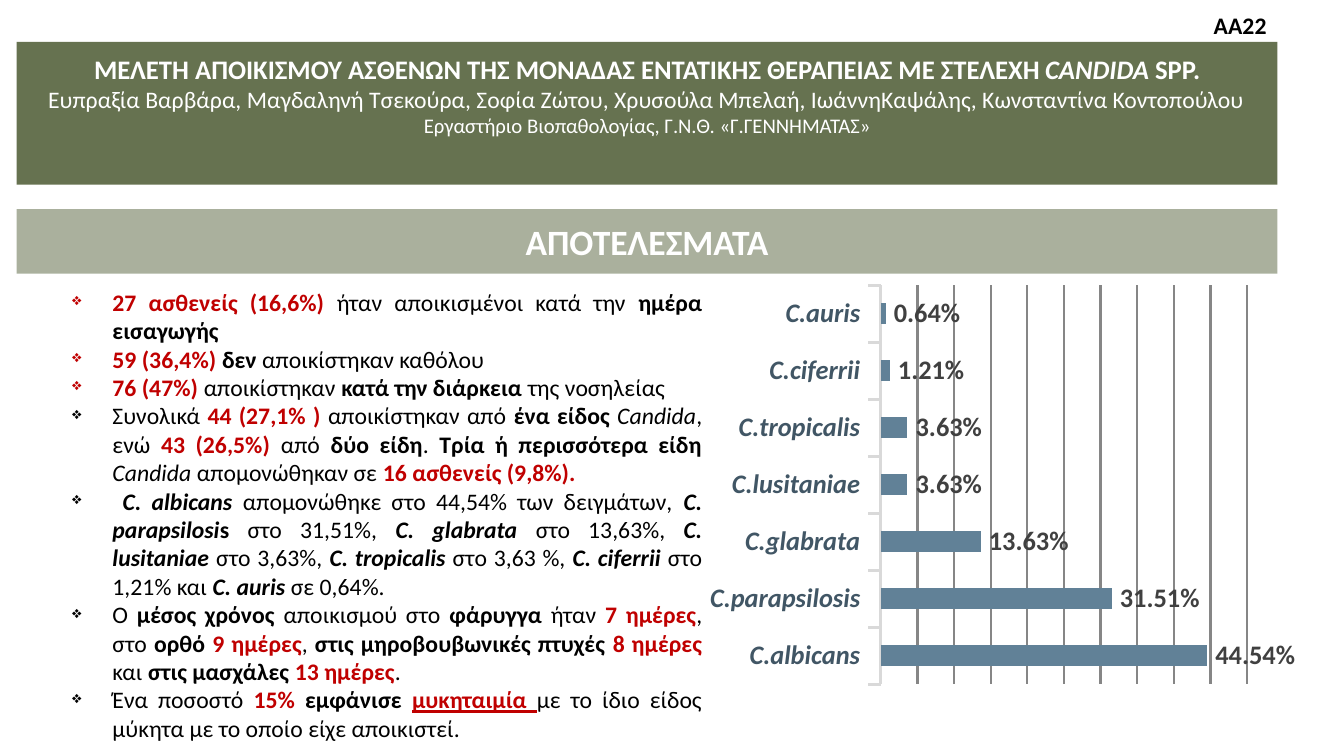
from dataclasses import dataclass

from lxml import etree
from pptx import Presentation
from pptx import util as u
from pptx.chart import data as chart_data
from pptx.dml.color import RGBColor
from pptx.enum import chart as ch, shapes, text
from pptx.oxml import parse_xml
from pptx.oxml.ns import nsdecls, qn

OLIVE = RGBColor(0x56, 0x63, 0x3D)
WHITE = RGBColor(0xFF, 0xFF, 0xFF)
BLACK = RGBColor(0, 0, 0)
RED = RGBColor(0xC0, 0, 0)
STEEL = RGBColor(0x61, 0x81, 0x97)
SLATE = RGBColor(0x41, 0x56, 0x65)
CHARCOAL = RGBColor(0x40, 0x40, 0x40)
AXIS_GREY = RGBColor(0xD9, 0xD9, 0xD9)
GRID_GREY = RGBColor(0x86, 0x86, 0x86)
FONT = "Calibri"
BAND_LEFT, BAND_WIDTH = 0.2, 15.01
INDENT = u.Cm(0.48)


@dataclass
class Span:
    words: str
    bold: bool = False
    italic: bool = False
    red: bool = False
    underline: bool = False
    size: float | None = None


@dataclass
class Band:
    top: float
    height: float
    opacity: int
    size: float
    anchor: text.MSO_ANCHOR
    lines: list[list[Span]]


def plain(words: str) -> Span:
    return Span(words)


def bold(words: str) -> Span:
    return Span(words, bold=True)


def species(words: str) -> Span:
    return Span(words, bold=True, italic=True)


def key(words: str) -> Span:
    return Span(words, bold=True, red=True)


BANDS = [
    Band(2.49, 0.77, 50, 12, text.MSO_ANCHOR.MIDDLE, [[bold("ΑΠΟΤΕΛΕΣΜΑΤΑ")]]),
    Band(0.5, 1.7, 90, 9, text.MSO_ANCHOR.TOP, [
        [bold("ΜΕΛΕΤΗ ΑΠΟΙΚΙΣΜΟΥ ΑΣΘΕΝΩΝ ΤΗΣ ΜΟΝΑΔΑΣ ΕΝΤΑΤΙΚΗΣ ΘΕΡΑΠΕΙΑΣ ΜΕ ΣΤΕΛΕΧΗ "),
         species("CANDIDA"), bold(" SPP.")],
        [Span("Ευπραξία Βαρβάρα, Μαγδαληνή Τσεκούρα, Σοφία Ζώτου, Χρυσούλα Μπελαή, "
              "ΙωάννηΚαψάλης, Κωνσταντίνα Κοντοπούλου", size=8)],
        [Span("Εργαστήριο Βιοπαθολογίας, Γ.Ν.Θ. «Γ.ΓΕΝΝΗΜΑΤΑΣ»", size=7)],
    ]),
]

FINDINGS = [
    [key("27 ασθενείς (16,6%) "), plain("ήταν αποικισμένοι κατά την "),
     bold("ημέρα εισαγωγής")],
    [key("59 (36,4%) "), bold("δεν"), plain(" αποικίστηκαν καθόλου ")],
    [key("76 (47%) "), plain("αποικίστηκαν "), bold("κατά την διάρκεια"),
     plain(" της νοσηλείας")],
    [plain("Συνολικά "), key("44 (27,1% ) "), plain("αποικίστηκαν από "),
     bold("ένα είδος "), Span("Candida", italic=True), plain(", ενώ "),
     key("43 (26,5%)"), plain(" από "), bold("δύο είδη"), plain(". "),
     bold("Τρία ή περισσότερα είδη "), Span("Candida", italic=True),
     plain(" απομονώθηκαν σε "), key("16 ασθενείς (9,8%).")],
    [plain(" "), species("C. albicans "),
     plain("απομονώθηκε στο 44,54% των δειγμάτων, "),
     species("C. parapsilosi"), bold("s"), plain(" στο 31,51%, "),
     species("C. glabrata "), plain("στο 13,63%, "),
     species("C. lusitaniae"), plain(" στο 3,63%, "),
     species("C. tropicalis "), plain("στο 3,63 %, "),
     species("C. ciferrii "), plain("στο 1,21% και "),
     species("C. auris "), plain("σε 0,64%.")],
    [plain("Ο "), bold("μέσος χρόνος "), plain("αποικισμού στο "),
     bold("φάρυγγα"), plain(" ήταν "), key("7 ημέρες"), plain(", στο "),
     bold("ορθό "), key("9 ημέρες"), plain(", "),
     bold("στις μηροβουβωνικές πτυχές "), key("8 ημέρες "), plain("και "),
     bold("στις μασχάλες "), key("13 ημέρες"), plain(".")],
    [plain("Ένα ποσοστό "), key("15% "), bold("εμφάνισε "),
     Span("μυκηταιμία ", bold=True, red=True, underline=True),
     plain("με το ίδιο είδος μύκητα με το οποίο είχε αποικιστεί.")],
]

ISOLATES = {
    "C.albicans": 0.4454, "C.parapsilosis": 0.3151, "C.glabrata": 0.1363,
    "C.lusitaniae": 0.0363, "C.tropicalis": 0.0363, "C.ciferrii": 0.0121,
    "C.auris": 0.0064,
}


def style(font, size: float, color: RGBColor) -> None:
    font.name, font.size = FONT, u.Pt(size)
    font.color.rgb = color


def write(paragraph, spans: list[Span]) -> None:
    for span in spans:
        run = paragraph.add_run()
        run.text = span.words
        if span.bold:
            run.font.bold = True
        if span.italic:
            run.font.italic = True
        if span.underline:
            run.font.underline = True
        if span.red:
            run.font.color.rgb = RED
        if span.size:
            run.font.size = u.Pt(span.size)


def add_band(slide, band: Band) -> None:
    box = slide.shapes.add_shape(
        shapes.MSO_SHAPE.RECTANGLE, u.Cm(BAND_LEFT), u.Cm(band.top),
        u.Cm(BAND_WIDTH), u.Cm(band.height))
    box.shadow.inherit = False
    box.line.fill.background()
    box.fill.solid()
    box.fill.fore_color.rgb = OLIVE
    tint = box.fill._xPr.find(".//" + qn("a:srgbClr"))
    etree.SubElement(tint, qn("a:alpha"), val=str(band.opacity * 1000))
    frame = box.text_frame
    frame.word_wrap, frame.vertical_anchor = True, band.anchor
    paragraph = frame.paragraphs[0]
    paragraph.alignment = text.PP_ALIGN.CENTER
    style(paragraph.font, band.size, WHITE)
    for number, spans in enumerate(band.lines):
        if number:
            paragraph.add_line_break()
        write(paragraph, spans)


def add_code(slide) -> None:
    """Adds the poster number in the top right corner."""
    box = slide.shapes.add_textbox(u.Cm(14.2), 0, u.Cm(1.14), u.Cm(0.6))
    box.text_frame.word_wrap = False
    paragraph = box.text_frame.paragraphs[0]
    paragraph.text = "ΑΑ22"
    style(paragraph.font, 8, BLACK)
    paragraph.font.bold = True


def add_findings(slide) -> None:
    box = slide.shapes.add_textbox(u.Cm(0.61), u.Cm(3.3), u.Cm(8), u.Cm(5.74))
    frame = box.text_frame
    frame.word_wrap = True
    for number, spans in enumerate(FINDINGS):
        paragraph = frame.add_paragraph() if number else frame.paragraphs[0]
        paragraph.alignment = text.PP_ALIGN.JUSTIFY
        props = paragraph._p.get_or_add_pPr()
        props.set("marL", str(INDENT))
        props.set("indent", str(-INDENT))
        etree.SubElement(props, qn("a:buSzPct"), val="70000")
        etree.SubElement(props, qn("a:buChar"), char="❖")
        style(paragraph.font, 8, BLACK)
        write(paragraph, spans)


def add_isolates_chart(slide) -> None:
    shares = chart_data.CategoryChartData(number_format="0.00%")
    shares.categories = list(ISOLATES)
    shares.add_series("Series 1", list(ISOLATES.values()))
    chart = slide.shapes.add_chart(
        ch.XL_CHART_TYPE.BAR_CLUSTERED, u.Cm(8.41), u.Cm(3.3),
        u.Cm(7.01), u.Cm(4.95), shares).chart
    chart.has_legend = chart.has_title = False
    style(chart.font, 10, BLACK)

    names = chart.category_axis
    style(names.tick_labels.font, 9, SLATE)
    names.tick_labels.font.bold = names.tick_labels.font.italic = True
    names.major_tick_mark = ch.XL_TICK_MARK.OUTSIDE
    names.format.line.color.rgb = AXIS_GREY
    names.format.line.width = u.Pt(1)

    scale = chart.value_axis
    scale.visible = False
    scale.minimum_scale, scale.maximum_scale, scale.major_unit = 0, 0.5, 0.05
    scale.has_major_gridlines = True
    scale.major_gridlines.format.line.color.rgb = GRID_GREY
    scale.major_gridlines.format.line.width = u.Pt(0.75)

    plot = chart.plots[0]
    plot.gap_width, plot.vary_by_categories = 170, False
    bars = plot.series[0]
    bars.format.fill.solid()
    bars.format.fill.fore_color.rgb = STEEL
    labels = bars.data_labels
    labels.show_value = True
    labels.position = ch.XL_LABEL_POSITION.OUTSIDE_END
    labels.number_format, labels.number_format_is_linked = "0.00%", False
    style(labels.font, 9, CHARCOAL)
    labels.font.bold = True

    area = chart._chartSpace.chart.plotArea
    for old in area.findall(qn("c:layout")):
        area.remove(old)
    sides = "".join(f'<c:{side} val="{share}"/>' for side, share in
                    (("x", 0.3), ("y", 0.02), ("w", 0.63), ("h", 0.96)))
    area.insert(0, parse_xml(
        f'<c:layout {nsdecls("c")}><c:manualLayout><c:layoutTarget val="inner"/>'
        f'<c:xMode val="edge"/><c:yMode val="edge"/>{sides}</c:manualLayout></c:layout>'))


def main() -> None:
    deck = Presentation()
    deck.slide_width, deck.slide_height = u.Cm(16), u.Cm(9)
    slide = deck.slides.add_slide(deck.slide_layouts[6])
    for band in BANDS:
        add_band(slide, band)
    add_code(slide)
    add_findings(slide)
    add_isolates_chart(slide)
    deck.save("out.pptx")


if __name__ == "__main__":
    main()
